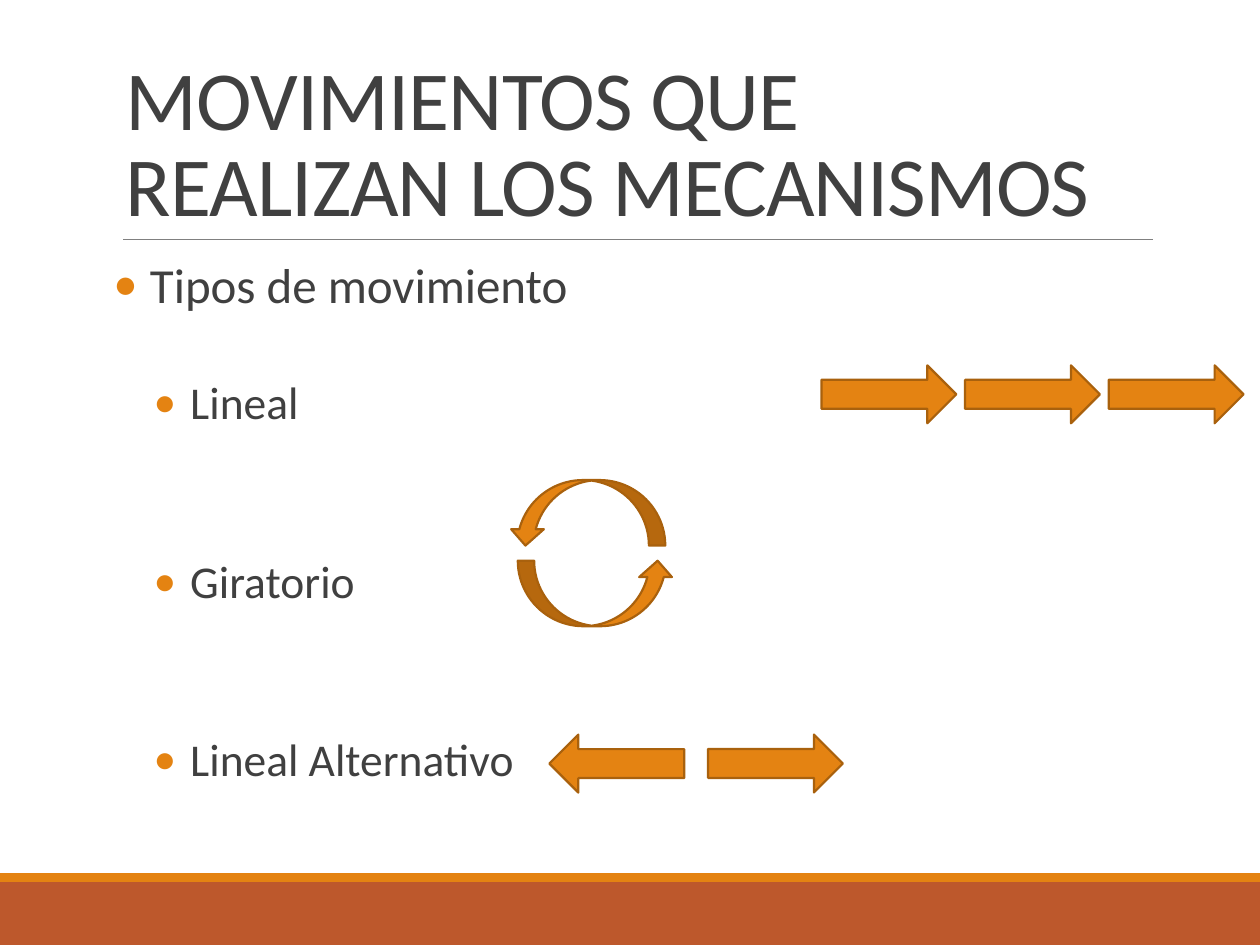
from lxml import etree
from pptx import Presentation
from pptx.dml.color import RGBColor
from pptx.enum import shapes, text
from pptx.oxml import ns
from pptx.util import Inches, Pt

FONT = "Calibri"
ORANGE, RUST, OUTLINE, DARK, GRAY = "E48312", "BD582C", "A9610D", "404040", "808080"
ARROW_WIDTH, ARROW_HEIGHT = 1.07, 0.46


def color(value):
    return RGBColor.from_string(value)


def set_values(target, values):
    for name, value in values.items():
        setattr(target, name, value)


def add_filled_shape(slide, kind, box, fill, outline=None, rotation=0):
    shape = slide.shapes.add_shape(kind, *map(Inches, box))
    shape.shadow.inherit = False
    shape.rotation = rotation
    shape.fill.solid()
    shape.fill.fore_color.rgb = color(fill)
    if outline:
        shape.line.color.rgb = color(outline)
        shape.line.width = Pt(1.25)
    else:
        shape.line.fill.background()


def add_arrow(slide, kind, box, rotation=0):
    add_filled_shape(slide, kind, box, ORANGE, OUTLINE, rotation)


def add_rule(slide, left, right, top):
    rule = slide.shapes.add_connector(
        shapes.MSO_CONNECTOR.STRAIGHT,
        Inches(left), Inches(top), Inches(right), Inches(top))
    rule.line.color.rgb = color(GRAY)
    rule.line.width = Pt(0.5)
    etree.SubElement(rule._element.spPr, ns.qn("a:effectLst"))


def add_text_frame(slide, box, values):
    frame = slide.shapes.add_textbox(*map(Inches, box)).text_frame
    set_values(frame, {"word_wrap": True, **values})
    return frame


def write_paragraph(paragraph, wording, size, values):
    run = paragraph.add_run()
    run.text = wording
    set_values(run.font, {"name": FONT, "size": Pt(size)})
    run.font.color.rgb = color(DARK)
    set_values(paragraph, values)
    return run


def add_bullet(paragraph, margin):
    properties = paragraph._p.get_or_add_pPr()
    properties.set("marL", str(Inches(margin)))
    properties.set("indent", str(Inches(-0.29)))
    bullet_color = etree.SubElement(properties, ns.qn("a:buClr"))
    etree.SubElement(bullet_color, ns.qn("a:srgbClr"), val=ORANGE)
    etree.SubElement(properties, ns.qn("a:buFont"), typeface=FONT)
    etree.SubElement(properties, ns.qn("a:buChar"), char="•")


def add_title(slide):
    frame = add_text_frame(slide, (0.9, 0.31, 8.25, 1.59),
                           {"vertical_anchor": text.MSO_ANCHOR.BOTTOM})
    run = write_paragraph(frame.paragraphs[0], "MOVIMIENTOS QUE REALIZAN LOS MECANISMOS",
                          48, {"line_spacing": 0.85})
    run.font._element.set("spc", "-50")


def add_movement_list(slide):
    frame = add_text_frame(slide, (0.9, 2.02, 8.25, 4.4),
                           {"margin_left": 0, "margin_right": 0})
    items = [
        ("Tipos de movimiento", 28, 0.29, 12, 2),
        ("Lineal", 26, 0.61, 36, 4),
        ("Giratorio", 26, 0.61, 70, 4),
        ("Lineal Alternativo", 26, 0.61, 70, 4),
    ]
    for index, (wording, size, margin, before, after) in enumerate(items):
        paragraph = frame.add_paragraph() if index else frame.paragraphs[0]
        write_paragraph(paragraph, wording, size, {
            "line_spacing": 0.9, "space_before": Pt(before), "space_after": Pt(after)})
        add_bullet(paragraph, margin)


def add_movement_arrows(slide):
    straight = shapes.MSO_SHAPE.RIGHT_ARROW
    curved = shapes.MSO_SHAPE.CURVED_UP_ARROW
    for index in range(3):
        add_arrow(slide, straight, (6.52 + 1.14 * index, 2.9, ARROW_WIDTH, ARROW_HEIGHT))
    for left, top, rotation in ((4.11, 4.45, 0), (4.04, 3.81, 180)):
        add_arrow(slide, curved, (left, top, 1.24, 0.52), rotation)
    for left, rotation in ((4.36, 180), (5.62, 0)):
        add_arrow(slide, straight, (left, 5.83, ARROW_WIDTH, ARROW_HEIGHT), rotation)


def main():
    presentation = Presentation()
    set_values(presentation, {"slide_width": Inches(10), "slide_height": Inches(7.5)})
    slide = presentation.slides.add_slide(presentation.slide_layouts[6])
    for top, height, fill in ((7, 0.5, RUST), (6.93, 0.07, ORANGE)):
        add_filled_shape(slide, shapes.MSO_SHAPE.RECTANGLE, (0, top, 10, height), fill)
    add_rule(slide, 0.98, 9.15, 1.9)
    add_title(slide)
    add_movement_list(slide)
    add_movement_arrows(slide)
    presentation.save("out.pptx")


if __name__ == "__main__":
    main()
